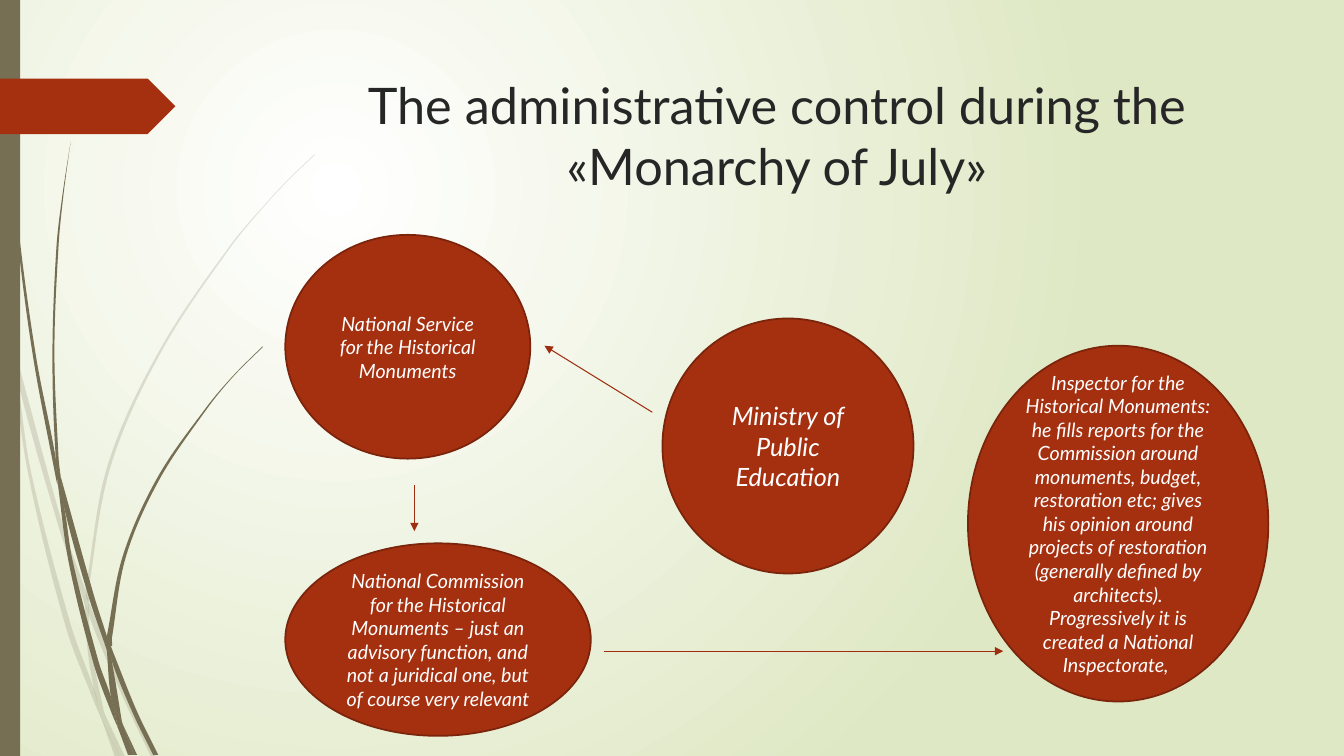
"""Build the slide on administrative control during the Monarchy of July."""
from dataclasses import dataclass
from math import dist

from lxml.etree import SubElement
from pptx import Presentation
from pptx.dml.color import RGBColor
from pptx.enum.shapes import MSO_CONNECTOR, MSO_SHAPE
from pptx.enum.text import MSO_ANCHOR, PP_ALIGN
from pptx.oxml.ns import qn
from pptx.util import Inches, Pt

COLORS = {
    "white": "FFFFFF", "pale_green": "DFE8C4", "stalk": "766F54", "red": "A53010",
    "outline": "7A240C", "arrow": "9E2E0F", "title": "262626",
}
FONT = "Lato"
Point = tuple[float, float]


@dataclass(frozen=True)
class Blade:
    there: list[Point]
    back: list[Point]


@dataclass(frozen=True)
class Body:
    text: str
    left: float
    top: float
    width: float
    height: float
    size: int = 14


@dataclass(frozen=True)
class Arrow:
    start: Point
    end: Point


FAINT_BLADES = [
    Blade([(0.11, 3.5), (0.09, 3.22), (0, 2.82)], [(0, 2.99), (0.1, 3.44), (0.11, 3.5)]),
    Blade([(0.14, 3.45), (0.17, 3.76), (0.58, 5.22), (0.84, 5.99)],
          [(0.85, 5.86), (0.62, 5.2), (0.14, 3.45)]),
    Blade([(0.88, 5.96), (0.88, 6.1), (1.23, 6.94), (1.5, 7.51)],
          [(1.55, 7.51), (1.27, 6.92), (0.92, 6.07), (0.88, 5.96)]),
    Blade([(1.05, 7.11), (1.19, 7.51)], [(1.24, 7.51), (1.05, 7.11)]),
    Blade([(0.11, 3.5), (0.28, 4.7), (0.65, 6.21), (0.92, 6.93), (1.01, 7.14)],
          [(0.99, 7.07), (0.93, 6.83), (0.7, 6.19), (0.31, 4.69), (0.17, 3.76), (0.11, 3.5)]),
    Blade([(0.84, 5.99), (0.87, 6.46), (0.93, 6.83), (0.96, 6.92), (1.05, 7.11)],
          [(1.03, 7.06), (0.91, 6.46), (0.88, 6.1), (0.88, 6.08), (0.84, 5.99)]),
    Blade([(0.85, 5.86), (0.88, 5.96), (0.88, 5.84), (1.1, 4.62), (1.6, 3.49),
           (2.29, 2.45), (2.68, 1.98), (2.9, 1.75), (3.12, 1.54)],
          [(3.12, 1.53), (2.89, 1.75), (2.68, 1.97), (2.28, 2.44), (1.58, 3.48),
           (1.07, 4.61), (0.85, 5.84)]),
    Blade([(1.01, 7.14), (1.14, 7.51)], [(1.19, 7.51), (1.01, 7.14)]),
    Blade([(0.85, 5.86), (0.84, 5.99), (0.88, 6.08)], [(0.88, 6.1), (0.88, 5.96)]),
    Blade([(0.93, 6.83), (0.99, 7.07), (1.01, 7.14), (1.19, 7.51)],
          [(1.05, 7.11), (0.96, 6.92), (0.93, 6.83)]),
]
DARK_BLADES = [
    Blade([(0.03, 0), (0.04, 0.48), (0.07, 1.1), (0.17, 2.33), (0.33, 3.55), (0.56, 4.77)],
          [(0.57, 4.81), (0.55, 4.53), (0.36, 3.55), (0.19, 2.32), (0.08, 1.09),
           (0.05, 0.48), (0.04, 0)]),
    Blade([(0.6, 4.72), (0.64, 5.05), (0.88, 5.92), (1.06, 6.45)],
          [(1.06, 6.31), (0.93, 5.9), (0.6, 4.72)]),
    Blade([(1.1, 6.41), (1.11, 6.56), (1.32, 7.08), (1.52, 7.49)],
          [(1.57, 7.49), (1.36, 7.06), (1.13, 6.49), (1.1, 6.41)]),
    Blade([(0.57, 4.77), (0.68, 5.57), (0.93, 6.59), (1.11, 7.08), (1.17, 7.22)],
          [(1.16, 7.17), (1.1, 6.91), (0.98, 6.57), (0.72, 5.56), (0.64, 5.05), (0.57, 4.77)]),
    Blade([(0.6, 4.72), (0.58, 4.53), (0.54, 3.49), (0.58, 2.45), (0.63, 1.93), (0.7, 1.41)],
          [(0.7, 1.41), (0.62, 1.93), (0.56, 2.45), (0.52, 3.49), (0.55, 4.49), (0.6, 4.72)]),
    Blade([(1.22, 7.19), (1.33, 7.49)], [(1.36, 7.49), (1.22, 7.19)]),
    Blade([(0.55, 4.49), (0.57, 4.77), (0.64, 5.05)], [(0.6, 4.72), (0.55, 4.49)]),
    Blade([(1.06, 6.31), (1.1, 6.41), (1.11, 6.33), (1.25, 5.52), (1.58, 4.76),
           (2.05, 4.06), (2.31, 3.74), (2.61, 3.44)],
          [(2.6, 3.44), (2.31, 3.73), (2.04, 4.05), (1.56, 4.74), (1.22, 5.51), (1.06, 6.31)]),
    Blade([(1.17, 7.22), (1.27, 7.49)], [(1.31, 7.49), (1.17, 7.22)]),
    Blade([(1.06, 6.45), (1.1, 6.91), (1.16, 7.06), (1.22, 7.19)],
          [(1.21, 7.16), (1.11, 6.56), (1.09, 6.51), (1.06, 6.45)]),
    Blade([(1.06, 6.31), (1.06, 6.45), (1.11, 6.56)], [(1.1, 6.41), (1.06, 6.31)]),
    Blade([(1.1, 6.91), (1.16, 7.17), (1.17, 7.22), (1.3, 7.49)],
          [(1.33, 7.49), (1.22, 7.19), (1.16, 7.06), (1.1, 6.91)]),
]
BODIES = [
    Body("Ministry of Public Education", 6.57, 3.16, 2.49, 2.53, 18),
    Body("National Service for the Historical Monuments", 2.83, 2.33, 2.43, 2.22),
    Body("National Commission for the Historical Monuments – just an advisory function, "
         "and not a juridical one, but of course very relevant", 2.83, 5.39, 3.03, 1.91),
    Body("Inspector for the Historical Monuments: he fills reports for the Commission around "
         "monuments, budget, restoration etc; gives his opinion around projects of restoration "
         "(generally defined by architects). Progressively it is created a National "
         "Inspectorate, ", 9.6, 3.43, 2.98, 3.53),
]
ARROWS = [
    Arrow((6.47, 4.09), (5.4, 3.43)),
    Arrow((4.11, 4.81), (4.11, 5.27)),
    Arrow((5.99, 6.46), (9.95, 6.46)),
]


def color(name: str) -> RGBColor:
    return RGBColor.from_string(COLORS[name])


def paint(shape, fill: str) -> None:
    shape.shadow.inherit = False
    shape.fill.solid()
    shape.fill.fore_color.rgb = color(fill)
    shape.line.fill.background()


def handle(point: Point, toward: Point, away: Point) -> Point:
    reach = dist(point, toward) / 3 / (dist(toward, away) or 1)
    return tuple(p + (t - a) * reach for p, t, a in zip(point, toward, away))


def bezier_segments(points: list[Point]) -> list[list[Point]]:
    padded = [points[0], *points, points[-1]]
    return [[handle(start, end, before), handle(end, start, after), end]
            for before, start, end, after in zip(padded, padded[1:], padded[2:], padded[3:])]


def draw_blade(slide, blade: Blade, opacity: int) -> None:
    outline = [(Inches(x), Inches(y)) for x, y in blade.there + blade.back]
    builder = slide.shapes.build_freeform(*outline[0])
    builder.add_line_segments(outline[1:], close=True)
    shape = builder.convert_to_shape()
    paint(shape, "stalk")
    segments = [*bezier_segments(blade.there), [blade.back[0]], *bezier_segments(blade.back)]
    for line, segment in zip(shape.element.xpath(".//a:lnTo"), segments):
        if len(segment) == 3:
            line.tag = qn("a:cubicBezTo")
            line.remove(line[0])
            for x, y in segment:
                SubElement(line, qn("a:pt"), x=str(Inches(x) - shape.left),
                           y=str(Inches(y) - shape.top))
    if opacity < 100:
        fill_color = shape.element.spPr.find(f"{qn('a:solidFill')}/{qn('a:srgbClr')}")
        SubElement(fill_color, qn("a:alpha"), val=str(opacity * 1000))


def write(shape, text: str, size: int, font_color: str, italic: bool) -> None:
    shape.text_frame.word_wrap = True
    paragraph = shape.text_frame.paragraphs[0]
    paragraph.text = text
    paragraph.alignment = PP_ALIGN.CENTER
    paragraph.font.name = FONT
    paragraph.font.size = Pt(size)
    paragraph.font.italic = italic
    paragraph.font.color.rgb = color(font_color)


def draw_body(slide, body: Body) -> None:
    shape = slide.shapes.add_shape(MSO_SHAPE.OVAL, Inches(body.left), Inches(body.top),
                                   Inches(body.width), Inches(body.height))
    paint(shape, "red")
    shape.line.color.rgb = color("outline")
    shape.line.width = Pt(1.25)
    shape.text_frame.vertical_anchor = MSO_ANCHOR.MIDDLE
    write(shape, body.text, body.size, "white", True)


def draw_arrow(slide, arrow: Arrow) -> None:
    connector = slide.shapes.add_connector(
        MSO_CONNECTOR.STRAIGHT, *(Inches(value) for value in arrow.start + arrow.end))
    connector.line.color.rgb = color("arrow")
    connector.line.width = Pt(0.75)
    SubElement(connector.element.spPr.find(qn("a:ln")), qn("a:tailEnd"), type="triangle")
    SubElement(connector.element.spPr, qn("a:effectLst"))


def draw_background(slide) -> None:
    fill = slide.background.fill
    fill.gradient()
    for stop, name in zip(fill.gradient_stops, ("white", "pale_green")):
        stop.color.rgb = color(name)
    gradient = slide.element.xpath(".//p:bg//a:gradFill")[0]
    gradient.remove(gradient.find(qn("a:lin")))
    circle = SubElement(gradient, qn("a:path"), {"path": "circle"})
    SubElement(circle, qn("a:fillToRect"), l="50000", t="50000", r="100000", b="100000")


def main() -> None:
    presentation = Presentation()
    presentation.slide_width, presentation.slide_height = Inches(13.33), Inches(7.5)
    slide = presentation.slides.add_slide(presentation.slide_layouts[6])
    draw_background(slide)
    for blades, opacity in ((FAINT_BLADES, 20), (DARK_BLADES, 100)):
        for blade in blades:
            draw_blade(slide, blade, opacity)
    paint(slide.shapes.add_shape(MSO_SHAPE.RECTANGLE, 0, 0, Inches(0.2), Inches(7.5)), "stalk")
    banner = slide.shapes.add_shape(MSO_SHAPE.PENTAGON, 0, Inches(0.78), Inches(1.74), Inches(0.55))
    paint(banner, "red")
    title = slide.shapes.add_textbox(Inches(2.83), Inches(0.69), Inches(9.75), Inches(1.4))
    write(title, "The administrative control during the «Monarchy of July»", 36, "title", False)
    for body in BODIES:
        draw_body(slide, body)
    for arrow in ARROWS:
        draw_arrow(slide, arrow)
    presentation.save("out.pptx")


if __name__ == "__main__":
    main()
